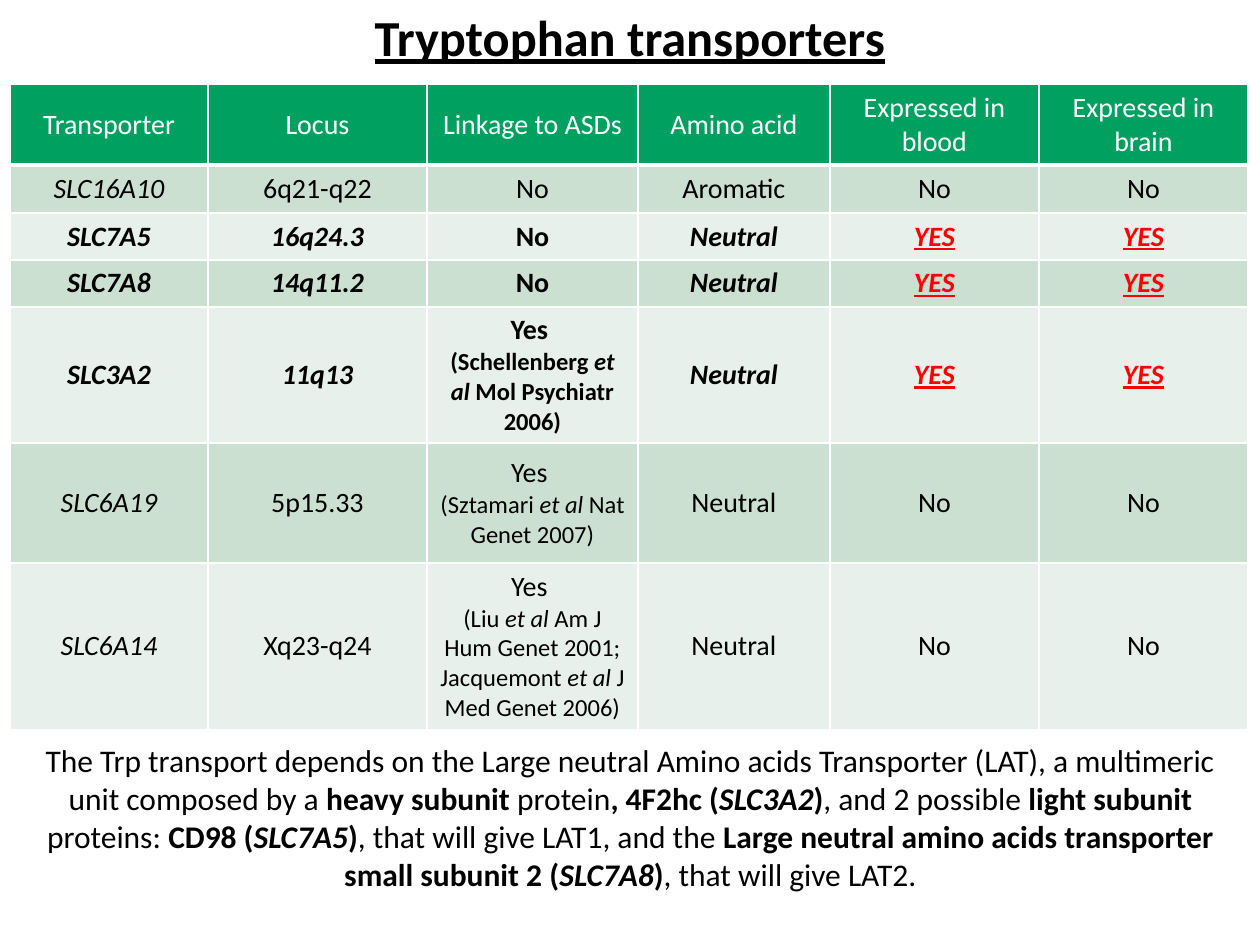
import lxml.etree
import pptx
import pptx.dml.color
import pptx.enum.shapes
import pptx.enum.text
import pptx.oxml.ns
import pptx.util

SCALE = 914400 // 126  # EMU per px
FONT = "Calibri"
COLORS = {
    "black": "000000",
    "white": "FFFFFF",
    "red": "FF0000",
    "header": "00A160",
    "band_dark": "CCE0D2",
    "band_light": "E7F0EA",
}

# In all texts, * switches bold and _ switches italic.
TITLE = "*Tryptophan transporters*"
HEADERS = ["Transporter", "Locus", "Linkage to ASDs", "Amino acid",
           "Expressed in blood", "Expressed in brain"]
# A second line in a cell is a smaller citation.
TRANSPORTERS = [
    ["_SLC16A10_", "6q21-q22", "No", "Aromatic", "No", "No"],
    ["*_SLC7A5_*", "*_16q24.3_*", "*No*", "*_Neutral_*", "*_YES_*", "*_YES_*"],
    ["*_SLC7A8_*", "*_14q11.2_*", "*No*", "*_Neutral_*", "*_YES_*", "*_YES_*"],
    ["*_SLC3A2_*", "*_11q13_*",
     "*Yes *\n*(Schellenberg _et al_ Mol Psychiatr 2006)*",
     "*_Neutral_*", "*_YES_*", "*_YES_*"],
    ["_SLC6A19_", "5p15.33", "Yes \n(Sztamari _et al_ Nat Genet 2007)",
     "Neutral", "No", "No"],
    ["_SLC6A14_", "Xq23-q24",
     "Yes \n(Liu _et al _Am J Hum Genet 2001; Jacquemont _et al _J Med Genet 2006)",
     "Neutral", "No", "No"],
]
SUMMARY = (
    "The Trp transport depends on the Large neutral Amino acids Transporter (LAT), "
    "a multimeric unit composed by a *heavy subunit *protein*, 4F2hc (_SLC3A2_)*, "
    "and 2 possible *light subunit* proteins: *CD98 (_SLC7A5_)*, that will give LAT1, "
    "and the *Large neutral amino acids transporter small subunit 2 (_SLC7A8_)*, "
    "that will give LAT2."
)

TITLE_BOX = (63, 0, 1134, 73)
TABLE_ORIGIN = (10, 84)
COLUMN_WIDTHS = [198, 219, 211, 192, 209, 209]
ROW_HEIGHTS = [80, 48, 46, 46, 120, 120, 120]
SUMMARY_BOX = (32, 735, 1197, 165)


def px(length):
    return pptx.util.Emu(length * SCALE)


def rgb(name):
    return pptx.dml.color.RGBColor.from_string(COLORS[name])


def write_text(paragraph, text, size, color="black", underline=False):
    """Write centred text, switching bold at * and italic at _."""
    paragraph.alignment = pptx.enum.text.PP_ALIGN.CENTER
    for bold_index, bold_part in enumerate(text.split("*")):
        for italic_index, part in enumerate(bold_part.split("_")):
            if not part:
                continue
            run = paragraph.add_run()
            run.text = part
            run.font.name = FONT
            run.font.size = pptx.util.Pt(size)
            run.font.bold = bold_index % 2 == 1
            run.font.italic = italic_index % 2 == 1
            run.font.underline = underline
            run.font.color.rgb = rgb(color)


def set_borders(cell, top, bottom):
    """Draw white borders; top and bottom are widths in points."""
    properties = cell._tc.get_or_add_tcPr()
    for side, width in (("L", 1), ("R", 1), ("T", top), ("B", bottom)):
        line = lxml.etree.SubElement(properties, pptx.oxml.ns.qn("a:ln" + side),
                                     w=str(pptx.util.Pt(width)))
        fill = lxml.etree.SubElement(line, pptx.oxml.ns.qn("a:solidFill"))
        lxml.etree.SubElement(fill, pptx.oxml.ns.qn("a:srgbClr"), val=COLORS["white"])


def fill_cell(cell, text, row_index):
    is_header = row_index == 0
    set_borders(cell, top=3 if row_index == 1 else 1, bottom=3 if is_header else 1)
    band = "band_dark" if row_index % 2 else "band_light"
    cell.fill.solid()
    cell.fill.fore_color.rgb = rgb("header" if is_header else band)
    cell.vertical_anchor = pptx.enum.text.MSO_ANCHOR.MIDDLE
    expressed = "YES" in text
    color = "white" if is_header else "red" if expressed else "black"
    for index, line in enumerate(text.split("\n")):
        frame = cell.text_frame
        paragraph = frame.add_paragraph() if index else frame.paragraphs[0]
        write_text(paragraph, line, size=14 if index else 16, color=color,
                   underline=expressed)


def add_title(slide):
    title = slide.shapes.title
    title.left, title.top, title.width, title.height = map(px, TITLE_BOX)
    title.text_frame.vertical_anchor = pptx.enum.text.MSO_ANCHOR.MIDDLE
    title.text_frame.auto_size = pptx.enum.text.MSO_AUTO_SIZE.NONE
    write_text(title.text_frame.paragraphs[0], TITLE, size=28.8, underline=True)


def add_transporter_table(slide):
    rows = [HEADERS] + TRANSPORTERS
    table = slide.shapes.add_table(
        len(rows), len(HEADERS), *map(px, TABLE_ORIGIN),
        px(sum(COLUMN_WIDTHS)), px(sum(ROW_HEIGHTS))).table
    for column, width in zip(table.columns, COLUMN_WIDTHS):
        column.width = px(width)
    for row, height in zip(table.rows, ROW_HEIGHTS):
        row.height = px(height)
    for row_index, texts in enumerate(rows):
        for column_index, text in enumerate(texts):
            fill_cell(table.cell(row_index, column_index), text, row_index)


def add_summary(slide):
    summary = slide.shapes.add_shape(pptx.enum.shapes.MSO_SHAPE.RECTANGLE,
                                     *map(px, SUMMARY_BOX))
    summary.shadow.inherit = False
    summary.fill.solid()
    summary.fill.fore_color.rgb = rgb("white")
    summary.line.fill.background()
    frame = summary.text_frame
    frame.word_wrap = True
    frame.auto_size = pptx.enum.text.MSO_AUTO_SIZE.SHAPE_TO_FIT_TEXT
    frame.vertical_anchor = pptx.enum.text.MSO_ANCHOR.TOP
    write_text(frame.paragraphs[0], SUMMARY, size=18)


def main():
    presentation = pptx.Presentation()
    presentation.slide_width = px(1260)
    presentation.slide_height = px(945)
    slide = presentation.slides.add_slide(presentation.slide_layouts[5])
    add_title(slide)
    add_transporter_table(slide)
    add_summary(slide)
    presentation.save("out.pptx")


if __name__ == "__main__":
    main()
